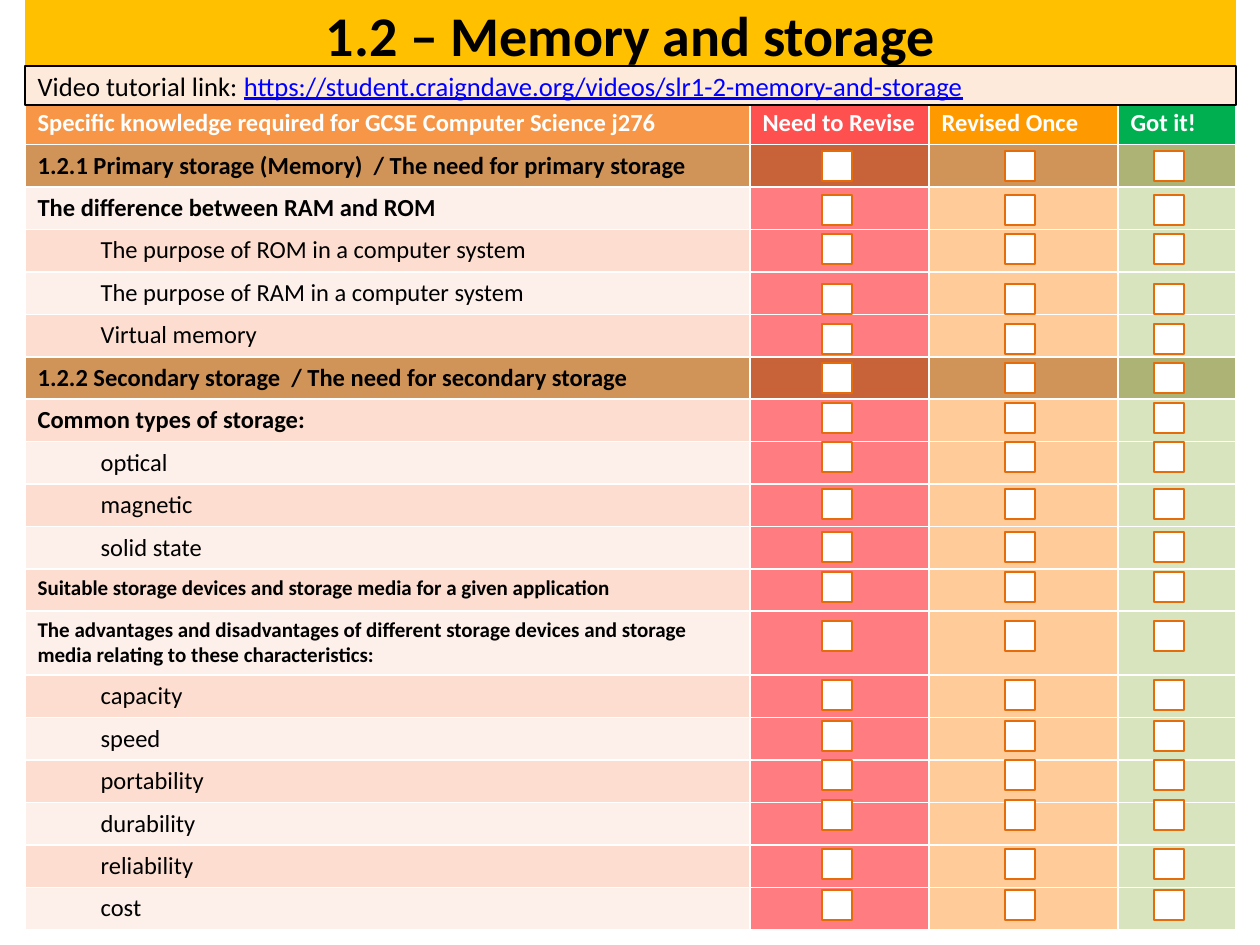
from pptx import Presentation
from pptx import util as u
from pptx.dml.color import RGBColor
from pptx.enum import shapes, text
from lxml import etree

HUE = {
    "black": "000000", "white": "FFFFFF", "gold": "FFC000", "cream": "FDEADA",
    "link": "0000FF", "edge": "E46C0A",
}
HEAD = ["F79646", "FF5050", "FF9900", "00B050"]
PART = ["D09458", "C76239", "D09458", "ADB375"]
MARKS = ["FF7C80", "FFCC99", "D7E4BD"]
BANDS = ["FDEFE9", "FCDDCF"]

TITLES = ["Specific knowledge required for GCSE Computer Science j276",
          "Need to Revise", "Revised Once", "Got it!"]
TOPICS = [
    ("part", "1.2.1 Primary storage (Memory)  / The need for primary storage"),
    ("main", "The difference between RAM and ROM"),
    ("sub", "The purpose of ROM in a computer system"),
    ("sub", "The purpose of RAM in a computer system"),
    ("sub", "Virtual memory"),
    ("part", "1.2.2 Secondary storage  / The need for secondary storage"),
    ("main", "Common types of storage:"),
    ("sub", "optical"),
    ("sub", "magnetic"),
    ("sub", "solid state"),
    ("small", "Suitable storage devices and storage media for a given application"),
    ("small", "The advantages and disadvantages of different storage devices "
              "and storage media relating to these characteristics:"),
    ("sub", "capacity"),
    ("sub", "speed"),
    ("sub", "portability"),
    ("sub", "durability"),
    ("sub", "reliability"),
    ("sub", "cost"),
]
WIDTHS = [725, 179, 189, 118]
ROW, TALL, WRAP = 42, 64, 12
TICK = 30
TICK_X = [797, 980, 1129]
TICK_Y = [49, 93, 132, 182, 222, 261, 301, 340, 387,
          430, 470, 519, 578, 619, 658, 698, 747, 788]


def px(n):
    return u.Emu(round(n * 914400 / 126))


def paint(item, hue):
    item.fill.solid()
    item.fill.fore_color.rgb = RGBColor.from_string(hue)


def outline(shape, hue):
    shape.line.color.rgb = RGBColor.from_string(hue)
    shape.line.width = u.Pt(1.5)


def style(font, size, hue="black", bold=False):
    font.name = "Calibri"
    font.size = u.Pt(size)
    font.bold = bold
    font.color.rgb = RGBColor.from_string(HUE[hue])


def place(shape, box):
    shape.left, shape.top, shape.width, shape.height = map(px, box)
    frame = shape.text_frame
    frame.margin_top = frame.margin_bottom = 0
    frame.vertical_anchor = text.MSO_ANCHOR.MIDDLE
    frame.auto_size = text.MSO_AUTO_SIZE.NONE
    return frame.paragraphs[0]


def banner(shape, box):
    para = place(shape, box)
    paint(shape, HUE["gold"])
    para.text = "1.2 – Memory and storage"
    para.alignment = text.PP_ALIGN.CENTER
    style(para.font, 32, bold=True)


def video(shape, box):
    para = place(shape, box)
    paint(shape, HUE["cream"])
    outline(shape, HUE["black"])
    props = para._p.get_or_add_pPr()
    props.set("marL", "0")
    props.set("indent", "0")
    etree.SubElement(props, "{http://schemas.openxmlformats.org/drawingml/2006/main}buNone")
    para.space_before = u.Pt(0)
    style(para.font, 15.2)
    para.add_run().text = "Video tutorial link: "
    link = para.add_run()
    link.text = "https://student.craigndave.org/videos/slr1-2-memory-and-storage"
    link.font.underline = True
    link.font.color.rgb = RGBColor.from_string(HUE["link"])


def topic(cell, kind, words):
    para = cell.text_frame.paragraphs[0]
    para.text = words
    if kind == "sub":
        para.level = 1
        para._p.get_or_add_pPr().set("marL", str(u.Inches(0.5)))
    style(para.font, 12 if kind == "small" else 14, bold=kind != "sub")


def checklist(slide, box):
    size = len(TOPICS) + 1
    grid = slide.shapes.add_table(size, len(WIDTHS), *map(px, box)).table
    for col, wide in zip(grid.columns, WIDTHS):
        col.width = px(wide)
    for i, row in enumerate(grid.rows):
        row.height = px(TALL if i == WRAP else ROW)
    for cell, words, hue in zip(grid.rows[0].cells, TITLES, HEAD):
        paint(cell, hue)
        para = cell.text_frame.paragraphs[0]
        para.text = words
        style(para.font, 14, "white", True)
    for i, (kind, words) in enumerate(TOPICS, 1):
        hues = PART if kind == "part" else [BANDS[i % 2]] + MARKS
        cells = list(grid.rows[i].cells)
        for cell, hue in zip(cells, hues):
            paint(cell, hue)
        topic(cells[0], kind, words)
        for cell in cells[1:]:
            cell.margin_top = cell.margin_bottom = 0


def ticks(slide, box):
    for y in TICK_Y:
        for x in TICK_X:
            tick = slide.shapes.add_shape(
                shapes.MSO_SHAPE.RECTANGLE,
                px(box[0] + x), px(box[1] + y), px(TICK), px(TICK))
            tick.shadow.inherit = False
            paint(tick, HUE["white"])
            outline(tick, HUE["edge"])


def main():
    deck = Presentation()
    deck.slide_width, deck.slide_height = px(1260), px(945)
    slide = deck.slides.add_slide(deck.slide_layouts[1])
    body = slide.placeholders[1]
    area = (25, 102, sum(WIDTHS), ROW * len(TOPICS) + TALL)
    banner(slide.shapes.title, (25, 0, area[2], 68))
    checklist(slide, area)
    ticks(slide, area)
    video(body, (25, 66, area[2], 39))
    slide.shapes._spTree.append(body._element)
    deck.save("out.pptx")


if __name__ == "__main__":
    main()
